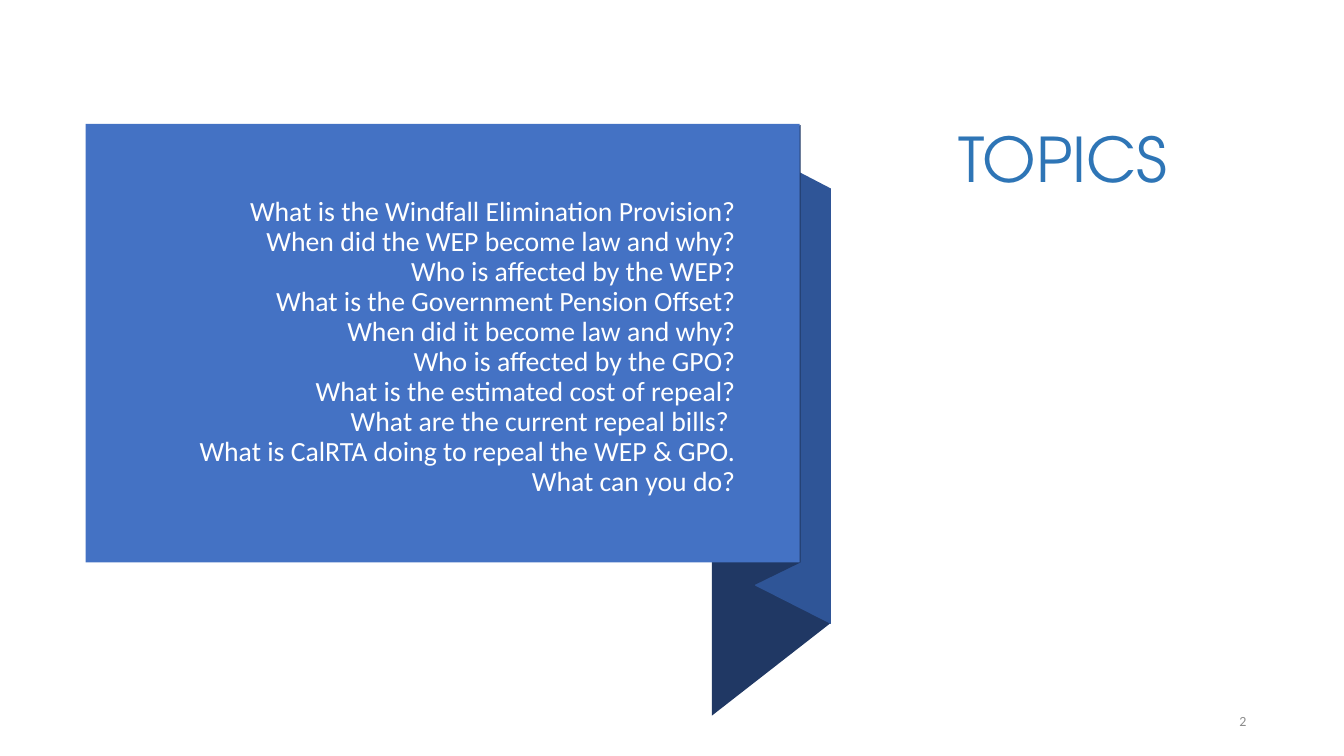
from dataclasses import dataclass

import pptx
import pptx.dml.color
import pptx.enum.shapes
import pptx.enum.text
import pptx.oxml
import pptx.oxml.ns
import pptx.util

Inches = pptx.util.Inches
ALIGN = pptx.enum.text.PP_ALIGN
ANCHOR = pptx.enum.text.MSO_ANCHOR
FIT = pptx.enum.text.MSO_AUTO_SIZE

COLORS = {
    "navy": "203864",
    "shade": "2F5597",
    "panel": "4472C4",
    "title": "2E75B6",
    "white": "FFFFFF",
    "gray": "8C8C8C",
}

TOPICS = [
    "What is the Windfall Elimination Provision?",
    "When did the WEP become law and why?",
    "Who is affected by the WEP?",
    "What is the Government Pension Offset?",
    "When did it become law and why?",
    "Who is affected by the GPO?",
    "What is the estimated cost of repeal?",
    "What are the current repeal bills? ",
    "What is CalRTA doing to repeal the WEP & GPO.",
    "What can you do?",
]


@dataclass
class Fold:
    """One face of the folded ribbon: corner points in inches and a color."""
    points: list[tuple[float, float]]
    color: str


FOLDS = [
    Fold([(8.24, 6.18), (7.06, 7.1), (7.06, 2.84), (8.24, 1.92)], "navy"),
    Fold([(8.24, 6.19), (7.49, 5.81), (7.49, 1.48), (8.24, 1.87)], "shade"),
    Fold([(7.94, 5.58), (7.49, 5.8), (7.49, 1.46), (7.94, 1.24)], "navy"),
]


def rgb(name: str) -> pptx.dml.color.RGBColor:
    return pptx.dml.color.RGBColor.from_string(COLORS[name])


def paint(shape, color: str) -> None:
    shape.shadow.inherit = False
    shape.fill.solid()
    shape.fill.fore_color.rgb = rgb(color)
    shape.line.fill.background()


def draw_fold(slide, fold: Fold) -> None:
    spots = [(Inches(x), Inches(y)) for x, y in fold.points]
    pen = slide.shapes.build_freeform(*spots[0])
    pen.add_line_segments(spots[1:], close=True)
    paint(pen.convert_to_shape(), fold.color)


def place(shape, left: float, top: float, width: float, height: float) -> None:
    shape.left, shape.top = Inches(left), Inches(top)
    shape.width, shape.height = Inches(width), Inches(height)


def write(shape, lines: list[str], *, size: float, color: str,
          font: str = "Calibri", align=ALIGN.LEFT, anchor=ANCHOR.MIDDLE,
          fit=FIT.NONE, space: float = 1.0) -> None:
    frame = shape.text_frame
    frame.word_wrap = True
    frame.auto_size = fit
    frame.vertical_anchor = anchor
    for i, line in enumerate(lines):
        para = frame.paragraphs[0] if i == 0 else frame.add_paragraph()
        props = para._p.get_or_add_pPr()
        props.set("marL", "0")
        props.set("indent", "0")
        pptx.oxml.ns.qn("a:buNone")
        props.append(pptx.oxml.parse_xml(
            f'<a:buNone {pptx.oxml.ns.nsdecls("a")}/>'))
        para.alignment = align
        para.line_spacing = space
        para.space_before = pptx.util.Pt(0)
        run = para.add_run()
        run.text = line
        run.font.size = pptx.util.Pt(size)
        run.font.name = font
        run.font.color.rgb = rgb(color)


def main() -> None:
    deck = pptx.Presentation()
    deck.slide_width, deck.slide_height = Inches(13.33), Inches(7.5)
    slide = deck.slides.add_slide(deck.slide_layouts[1])
    title, body = slide.placeholders[0], slide.placeholders[1]

    # Ribbon and panel
    for fold in FOLDS:
        draw_fold(slide, fold)
    panel = slide.shapes.add_shape(
        pptx.enum.shapes.MSO_SHAPE.RECTANGLE,
        Inches(0.85), Inches(1.23), Inches(7.08), Inches(4.35))
    paint(panel, "panel")

    # List of topics, raised above the panel
    slide.shapes._spTree.append(body._element)
    place(body, 1.5, 1.55, 5.89, 3.8)
    write(body, TOPICS, size=19.8, color="white", align=ALIGN.RIGHT, space=0.9)

    # Title
    place(title, 9.41, 1.15, 2.58, 0.84)
    write(title, ["TOPICS"], size=44, color="title", font="TeX Gyre Adventor",
          anchor=ANCHOR.TOP, fit=FIT.SHAPE_TO_FIT_TEXT)

    # Page number
    page = slide.shapes.add_textbox(
        Inches(11.71), Inches(6.98), Inches(0.75), Inches(0.35))
    write(page, ["2"], size=10, color="gray", align=ALIGN.RIGHT)

    deck.save("out.pptx")


if __name__ == "__main__":
    main()
